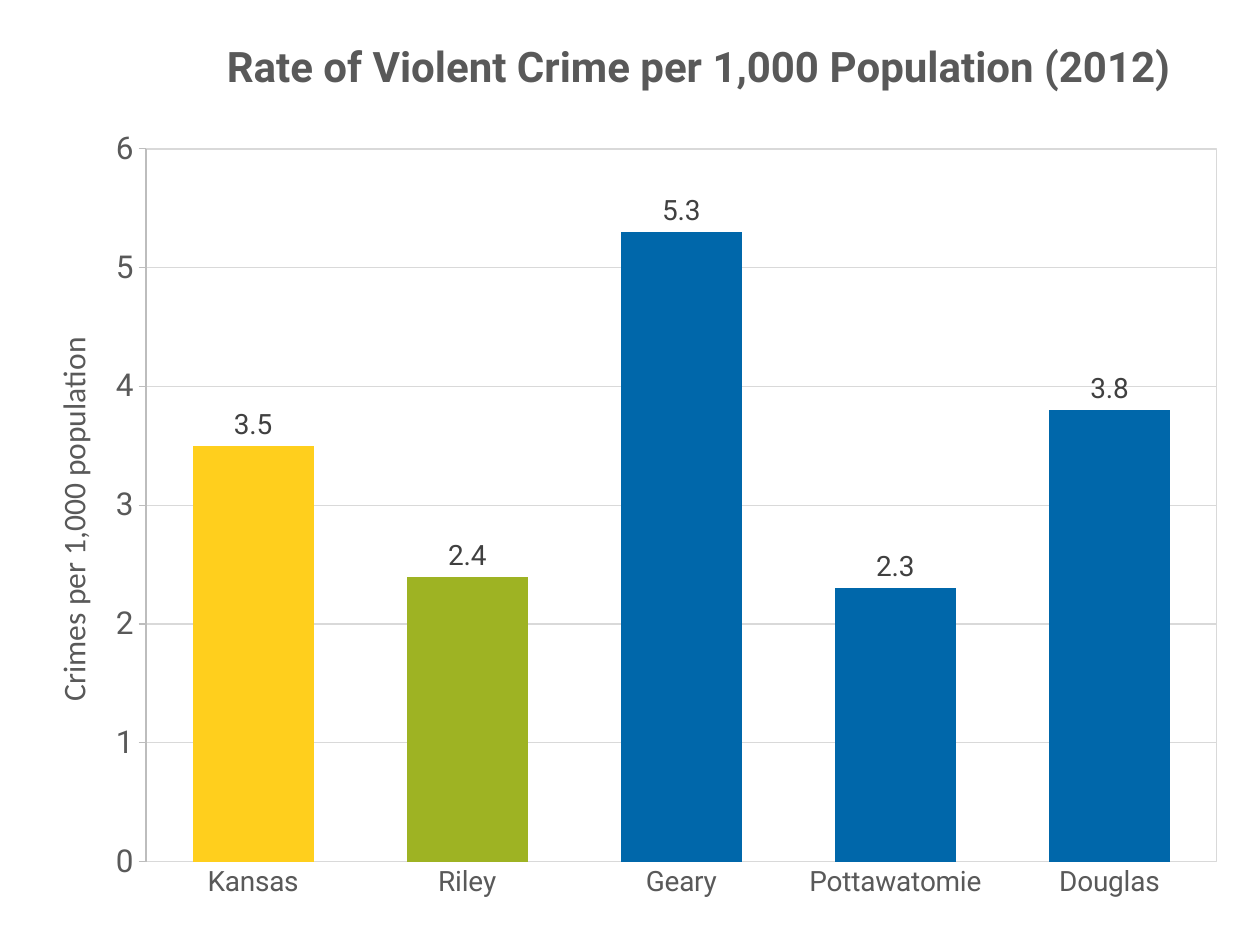
from lxml import etree
from pptx import Presentation
from pptx.chart.data import CategoryChartData
from pptx.dml.color import RGBColor
from pptx.enum.chart import XL_CHART_TYPE as ChartType, XL_LABEL_POSITION as LabelPos, XL_TICK_MARK as Tick
from pptx.oxml import parse_xml
from pptx.oxml.ns import nsdecls, qn
from pptx.util import Pt

PX = 914400 // 126
GREY, GRID = "595959", "D9D9D9"


def style(font, size, color, face="Roboto", bold=False):
    font.size, font.name, font.bold = Pt(size), face, bold
    font.color.rgb = RGBColor.from_string(color)


def place(element, index, inner=False, **fractions):
    """Give a chart part a manual layout in fractions of the chart."""
    for old in element.findall(qn("c:layout")):
        element.remove(old)
    layout = parse_xml(f"<c:layout {nsdecls('c')}><c:manualLayout/></c:layout>")
    settings = {"layoutTarget": "inner"} if inner else {}
    settings.update(xMode="edge", yMode="edge", **fractions)
    for tag, value in settings.items():
        etree.SubElement(layout[0], qn(f"c:{tag}")).set("val", str(value))
    element.insert(index, layout)


prs = Presentation()
prs.slide_width, prs.slide_height = 1260 * PX, 945 * PX
slide = prs.slides.add_slide(prs.slide_layouts[6])

# Crime rates by county
crime_data = CategoryChartData(number_format="#,##0.0")
crime_data.categories = ["Kansas", "Riley", "Geary", "Pottawatomie", "Douglas"]
crime_data.add_series("Series 1", [3.5, 2.4, 5.3, 2.3, 3.8])
chart = slide.shapes.add_chart(ChartType.COLUMN_CLUSTERED, 21 * PX, 21 * PX,
                               1239 * PX, 914 * PX, crime_data).chart
chart.has_legend = False
style(chart.font, 10, "000000", "Calibri")

# Plot area with a thin frame
plot_area = chart.plots[0]._element.getparent()
place(plot_area, 0, inner=True, x=0.101, y=0.14, w=0.864, h=0.78)
plot_area.append(parse_xml(
    f"<c:spPr {nsdecls('c', 'a')}><a:noFill/><a:ln w='9525'><a:solidFill>"
    f"<a:srgbClr val='{GRID}'/></a:solidFill></a:ln></c:spPr>"))

# Chart title and value axis title
rates, counties = chart.value_axis, chart.category_axis
for owner, text, size, face, bold, x, y in [
    (chart, "Rate of Violent Crime per 1,000 Population (2012)", 24, "Roboto", True, 0.16, 0.01),
    (rates, "Crimes per 1,000 population", 18, "Calibri", False, 0.02, 0.34),
]:
    heading = owner.chart_title if owner is chart else owner.axis_title
    run = heading.text_frame.paragraphs[0].add_run()
    run.text = text
    style(run.font, size, GREY, face, bold)
    place(heading._element, 1, x=x, y=y)

# Axes and gridlines
rates.minimum_scale, rates.maximum_scale, rates.major_unit = 0, 6, 1
rates.tick_labels.number_format = "#,##0"
rates.tick_labels.number_format_is_linked = False
rates.has_major_gridlines = True
for axis, size, tick, color in [(counties, 16, Tick.NONE, GRID),
                                (rates, 18, Tick.OUTSIDE, "BDBDBD")]:
    style(axis.tick_labels.font, size, GREY)
    axis.major_tick_mark, axis.minor_tick_mark = tick, Tick.NONE
    axis.format.line.color.rgb = RGBColor.from_string(color)
    axis.format.line.width = Pt(0.75)
grid_line = rates.major_gridlines.format.line
grid_line.color.rgb = RGBColor.from_string(GRID)
grid_line.width = Pt(0.75)

# Columns: state, home county, neighbouring counties
columns = chart.plots[0]
columns.gap_width, columns.vary_by_categories = 77, False
crime = columns.series[0]
crime.format.fill.solid()
crime.format.fill.fore_color.rgb = RGBColor.from_string("066243")
for index, color in enumerate(["FFCF1D", "9EB323"] + ["0067AA"] * 3):
    fill = crime.points[index].format.fill
    fill.solid()
    fill.fore_color.rgb = RGBColor.from_string(color)

# Value labels
labels = crime.data_labels
labels.show_value = True
labels.number_format, labels.number_format_is_linked = "#,##0.0", False
labels.position = LabelPos.OUTSIDE_END
style(labels.font, 16, "404040")

prs.save("out.pptx")
